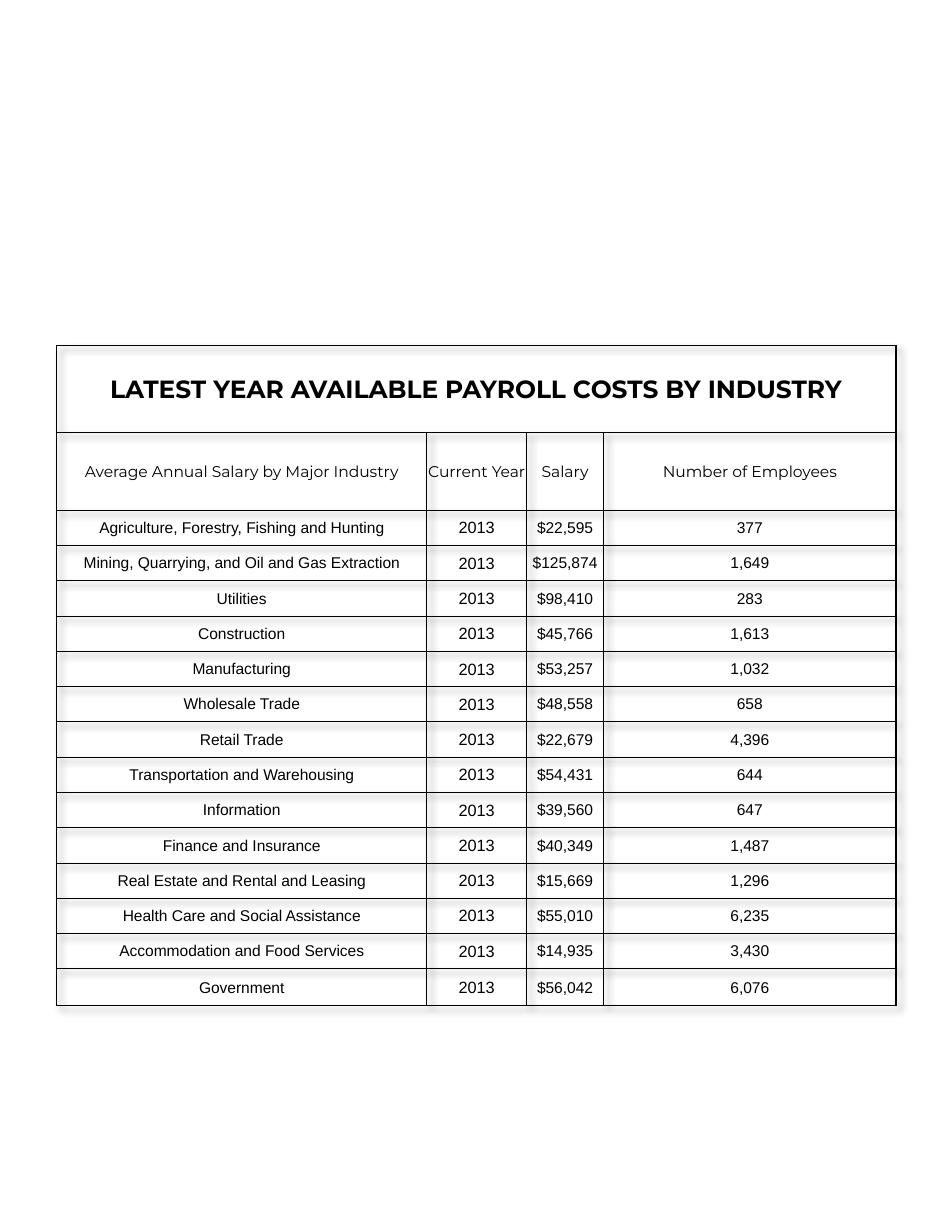
from lxml.etree import SubElement
from pptx import Presentation
from pptx.dml.color import RGBColor
from pptx.enum.text import MSO_ANCHOR, PP_ALIGN
from pptx.oxml import parse_xml
from pptx.oxml.ns import qn
from pptx.util import Cm, Pt

BLACK = RGBColor(0, 0, 0)
HEAD, BODY = "Montserrat", "Arial"
THIN, THICK = 0.5, 1
NS = "http://schemas.openxmlformats.org/drawingml/2006/main"

TITLE = "LATEST YEAR AVAILABLE PAYROLL COSTS BY INDUSTRY"
LABELS = ("Average Annual Salary by Major Industry", "Current Year",
          "Salary", "Number of Employees")
YEAR = "2013"
PAY = [
    ("Agriculture, Forestry, Fishing and Hunting", 22595, 377),
    ("Mining, Quarrying, and Oil and Gas Extraction", 125874, 1649),
    ("Utilities", 98410, 283),
    ("Construction", 45766, 1613),
    ("Manufacturing", 53257, 1032),
    ("Wholesale Trade", 48558, 658),
    ("Retail Trade", 22679, 4396),
    ("Transportation and Warehousing", 54431, 644),
    ("Information", 39560, 647),
    ("Finance and Insurance", 40349, 1487),
    ("Real Estate and Rental and Leasing", 15669, 1296),
    ("Health Care and Social Assistance", 55010, 6235),
    ("Accommodation and Food Services", 14935, 3430),
    ("Government", 56042, 6076),
]
WIDTHS = (8.4, 2.26, 1.75, 6.63)
HEIGHTS = [1.97, 1.77] + [0.8] * (len(PAY) - 1) + [0.84]


class Page:
    """Holds the table style and the current slide."""

    cell_style = {
        "vertical_anchor": MSO_ANCHOR.MIDDLE,
        "margin_left": Cm(0.02), "margin_right": Cm(0.02),
        "margin_top": Cm(0.02), "margin_bottom": 0,
    }

    def __init__(self, slide):
        self.slide = slide

    def table(self, left, top, widths, heights):
        frame = self.slide.shapes.add_table(
            len(heights), len(widths), Cm(left), Cm(top),
            Cm(sum(widths)), Cm(sum(heights)))
        table = frame.table
        table.first_row = table.horz_banding = False
        for col, width in zip(table.columns, widths):
            col.width = Cm(width)
        for row, height in zip(table.rows, heights):
            row.height = Cm(height)
        return table

    def shadow(self, table):
        table._tbl.tblPr.insert(0, parse_xml(
            f'<a:effectLst xmlns:a="{NS}">'
            '<a:outerShdw blurRad="50800" dist="50800" dir="2700000" '
            'algn="tl" rotWithShape="0"><a:srgbClr val="000000">'
            '<a:alpha val="40000"/></a:srgbClr></a:outerShdw>'
            '</a:effectLst>'))

    def cell(self, cell, text, font, size, bold=False):
        for name, value in self.cell_style.items():
            setattr(cell, name, value)
        para = cell.text_frame.paragraphs[0]
        para.alignment = PP_ALIGN.CENTER
        run = para.add_run()
        run.text = text
        look = {"name": font, "size": Pt(size), "bold": bold}
        for name, value in look.items():
            setattr(run.font, name, value)
        run.font.color.rgb = BLACK

    def border(self, cell, sides):
        props = cell._tc.get_or_add_tcPr()
        for side, width in sides.items():
            line = SubElement(props, qn(f"a:ln{side}"), w=str(Pt(width)))
            fill = SubElement(line, qn("a:solidFill"))
            SubElement(fill, qn("a:srgbClr"), val=str(BLACK))
        cell.fill.background()

    def grid(self, table):
        """Thin lines inside, thick lines around the outside."""
        rows, cols = len(table.rows), len(table.columns)
        for r in range(rows):
            for c in range(cols):
                edges = {"L": c == 0, "R": c == cols - 1 or r == 0,
                         "T": r == 0, "B": r == rows - 1}
                self.border(table.cell(r, c), {
                    side: THICK if outer else THIN
                    for side, outer in edges.items()})


def main():
    deck = Presentation()
    deck.slide_width, deck.slide_height = Cm(21.59), Cm(27.94)
    page = Page(deck.slides.add_slide(deck.slide_layouts[6]))

    # Table frame
    table = page.table(1.28, 7.83, WIDTHS, HEIGHTS)
    page.shadow(table)
    page.grid(table)

    # Title and column labels
    table.cell(0, 0).merge(table.cell(0, len(WIDTHS) - 1))
    page.cell(table.cell(0, 0), TITLE, HEAD, 16, True)
    for c, label in enumerate(LABELS):
        page.cell(table.cell(1, c), label, HEAD, 10)

    # Industry rows
    for r, (trade, wage, staff) in enumerate(PAY, 2):
        texts = (trade, YEAR, f"${wage:,}", f"{staff:,}")
        for c, text in enumerate(texts):
            size = 10.5 if text == YEAR else 10
            page.cell(table.cell(r, c), text, BODY, size)

    deck.save("out.pptx")


if __name__ == "__main__":
    main()
